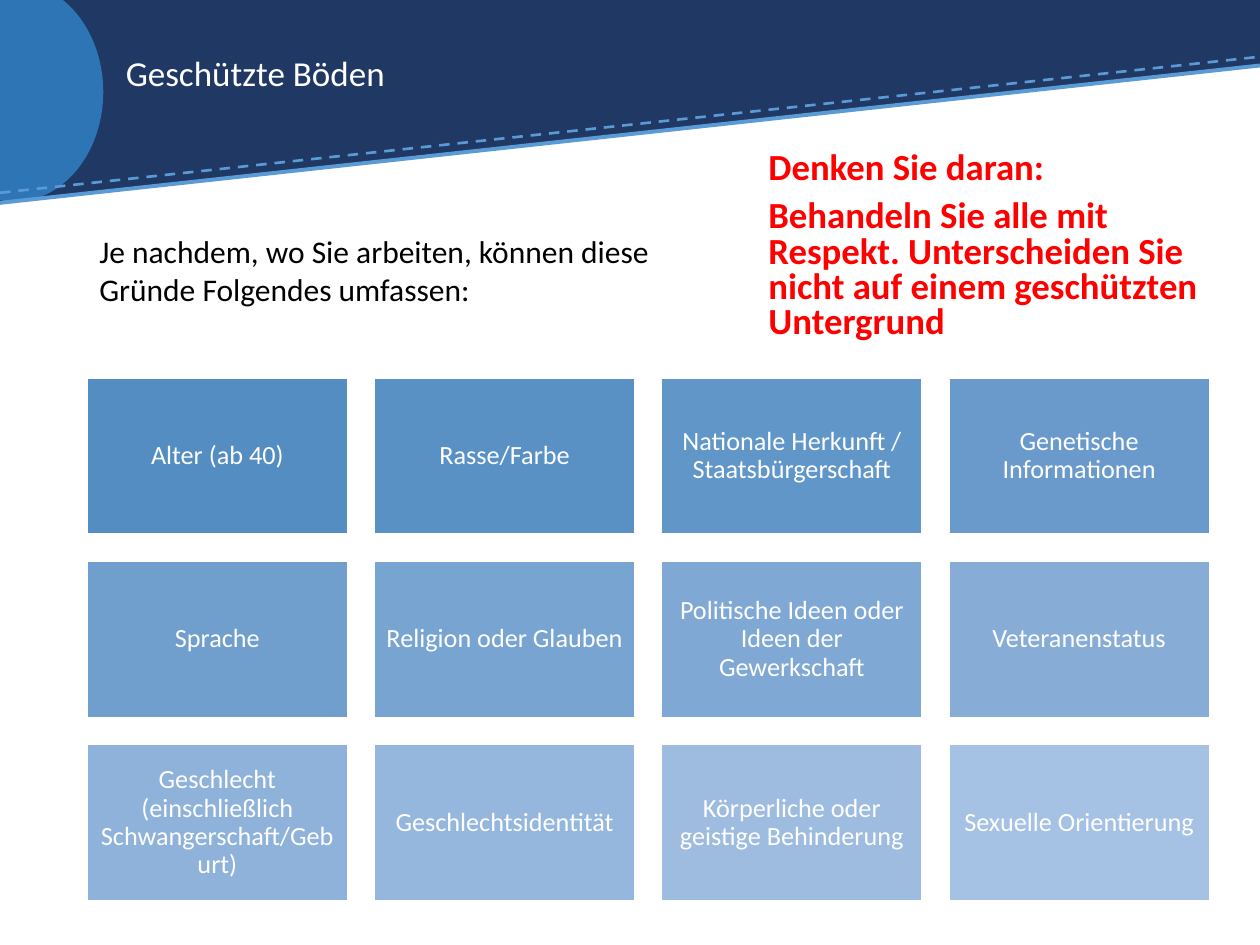
import pptx
import pptx.dml.color
import pptx.enum.dml
import pptx.enum.shapes
import pptx.enum.text
import pptx.oxml.ns
import pptx.util
import lxml.etree

Inches = pptx.util.Inches
Shapes = pptx.enum.shapes.MSO_SHAPE
Align = pptx.enum.text.PP_ALIGN
Anchor = pptx.enum.text.MSO_ANCHOR

NAVY, BLUE, SKY, WHITE, RED, BLACK = "203864", "2E75B6", "5B9BD5", "FFFFFF", "FF0000", "000000"
COLUMNS = 4
GROUNDS = [
    ("Alter (ab 40)", "538DC1"),
    ("Rasse/Farbe", "5A91C5"),
    ("Nationale Herkunft / Staatsbürgerschaft", "6196C8"),
    ("Genetische Informationen", "699ACB"),
    ("Sprache", "709FCE"),
    ("Religion oder Glauben", "77A4D1"),
    ("Politische Ideen oder Ideen der Gewerkschaft", "7FA8D4"),
    ("Veteranenstatus", "87ADD7"),
    ("Geschlecht (einschließlich Schwangerschaft/Geburt)", "8EB2DA"),
    ("Geschlechtsidentität", "96B7DD"),
    ("Körperliche oder geistige Behinderung", "9EBCE0"),
    ("Sexuelle Orientierung", "A5C1E3"),
]


def color(value):
    """Turn a hex string into a colour."""
    return pptx.dml.color.RGBColor.from_string(value)


def add_block(page, kind, left, top, width, height, fill, line=None):
    """Add a filled preset shape, with a thin outline if a line colour is given."""
    shape = page.shapes.add_shape(kind, Inches(left), Inches(top), Inches(width), Inches(height))
    shape.shadow.inherit = False
    shape.fill.solid()
    shape.fill.fore_color.rgb = color(fill)
    if line:
        shape.line.color.rgb = color(line)
        shape.line.width = pptx.util.Pt(1)
    else:
        shape.line.fill.background()
    return shape


def add_line(page, start_y, end_y, width, dash=None):
    """Add a line that crosses the whole page."""
    line = page.shapes.add_connector(
        pptx.enum.shapes.MSO_CONNECTOR.STRAIGHT, 0, Inches(start_y), Inches(10), Inches(end_y))
    line.line.color.rgb = color(SKY)
    line.line.width = pptx.util.Pt(width)
    if dash:
        line.line.dash_style = dash
    lxml.etree.SubElement(line._element.spPr, pptx.oxml.ns.qn("a:effectLst"))


def write(frame, texts, size, font_color, bold=False, spacing=1.0, before=0, align=Align.LEFT):
    """Write one paragraph for each text, all in the same style."""
    frame.word_wrap = True
    for index, text in enumerate(texts):
        paragraph = frame.add_paragraph() if index else frame.paragraphs[0]
        paragraph.text = text
        paragraph.alignment = align
        paragraph.line_spacing = spacing
        paragraph.space_before = pptx.util.Pt(before if index else 0)
        paragraph.font.name = "Calibri"
        paragraph.font.size = pptx.util.Pt(size)
        paragraph.font.bold = bold
        paragraph.font.color.rgb = color(font_color)


def add_text(page, left, top, width, height, texts, size, font_color, anchor=Anchor.TOP, **style):
    """Add a wrapping text box."""
    box = page.shapes.add_textbox(Inches(left), Inches(top), Inches(width), Inches(height))
    box.text_frame.vertical_anchor = anchor
    write(box.text_frame, texts, size, font_color, **style)


def add_header(page):
    """Add the slanted banner with its circle and lines."""
    add_block(page, Shapes.RECTANGLE, 0, 0, 10, 0.52, NAVY)
    slope = add_block(page, Shapes.RIGHT_TRIANGLE, 0, 0.51, 10, 1.09, NAVY)
    slope._element.spPr.xfrm.set("flipV", "1")
    add_block(page, Shapes.OVAL, -0.59, -0.14, 1.41, 1.74, BLUE)
    add_line(page, 1.53, 0.45, 1.5, pptx.enum.dml.MSO_LINE.DASH)
    add_line(page, 1.61, 0.52, 2.25)


def add_grounds(page):
    """Add the grid of protected grounds."""
    for index, (label, fill) in enumerate(GROUNDS):
        row, column = divmod(index, COLUMNS)
        tile = add_block(page, Shapes.RECTANGLE, 0.69 + 2.28 * column, 3 + 1.455 * row,
                         2.07, 1.24, fill, WHITE)
        frame = tile.text_frame
        frame.margin_left = frame.margin_right = Inches(0.06)
        frame.margin_top = frame.margin_bottom = Inches(0.06)
        frame.vertical_anchor = Anchor.MIDDLE
        write(frame, [label], 15, WHITE, spacing=0.9, align=Align.CENTER)


def main():
    """Build and save the slide."""
    deck = pptx.Presentation()
    deck.slide_width, deck.slide_height = Inches(10), Inches(7.5)
    page = deck.slides.add_slide(deck.slide_layouts[6])
    add_header(page)
    add_text(page, 0.9, 0.2, 8.07, 0.8, ["Geschützte Böden"], 20, WHITE,
             anchor=Anchor.MIDDLE, spacing=0.9)
    add_text(page, 6, 1.16, 3.78, 1.7,
             ["Denken Sie daran:",
              "Behandeln Sie alle mit Respekt. Unterscheiden Sie nicht auf einem "
              "geschützten Untergrund"],
             21, RED, bold=True, spacing=0.8, before=7.5)
    add_grounds(page)
    add_text(page, 0.69, 1.79, 4.61, 1,
             ["Je nachdem, wo Sie arbeiten, können diese Gründe Folgendes umfassen:"], 18, BLACK)
    deck.save("out.pptx")


if __name__ == "__main__":
    main()
